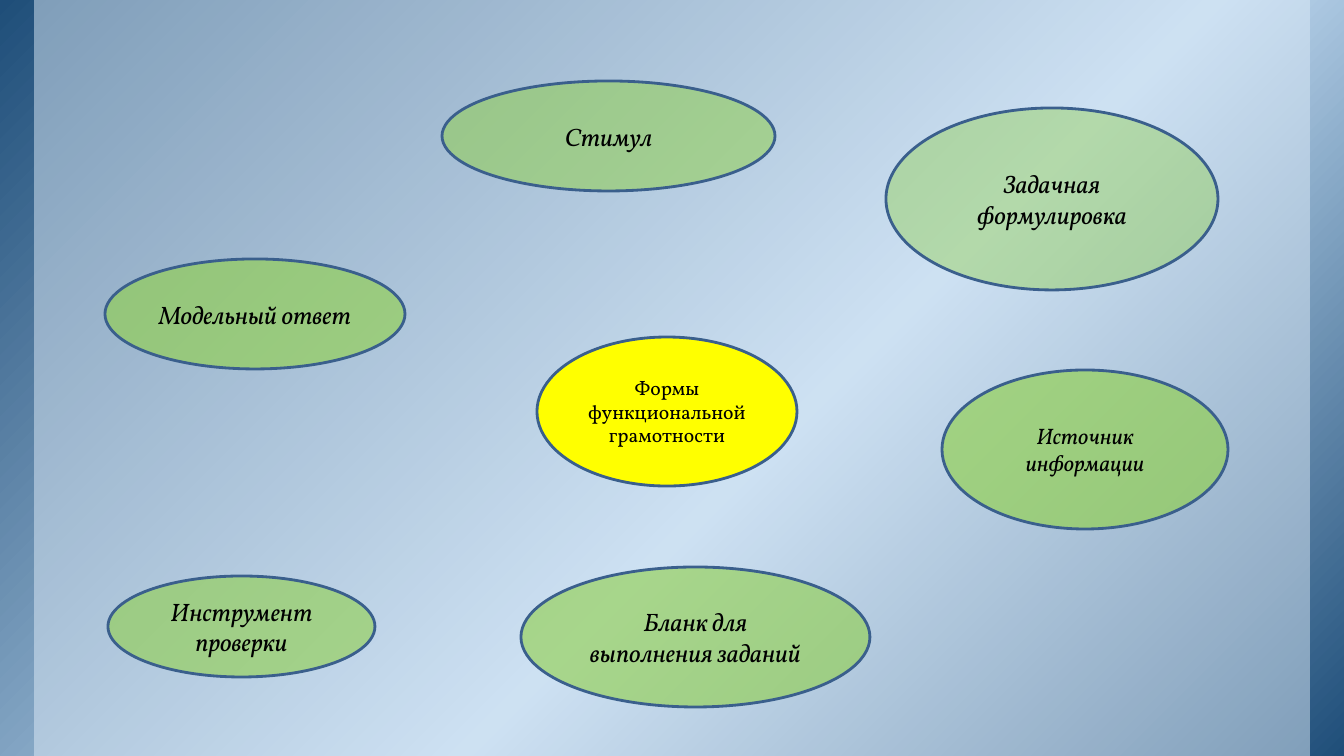
from dataclasses import dataclass

from lxml import etree
from pptx import Presentation
from pptx.dml.color import RGBColor
from pptx.enum.shapes import MSO_SHAPE as SHAPE
from pptx.enum.text import MSO_ANCHOR as ANCHOR, PP_ALIGN as ALIGN
from pptx.oxml.ns import qn
from pptx.util import Emu, Pt

WIDTH, HEIGHT = 1344, 756
SCALE = 914400 / 100.8


@dataclass(frozen=True)
class Theme:
    font: str = "Vollkorn"
    text: str = "000000"
    outline: str = "3A5F8C"
    outline_width: int = 2
    green: str = "92D050"
    yellow: str = "FFFF00"
    veil: str = "DEEBF7"
    veil_alpha: int = 50
    backdrop: tuple = ((0, "1F4E79"), (58, "BDD7EE"), (100, "1F4E79"))
    large: int = 18
    medium: int = 16
    small: int = 14


THEME = Theme()

FORMS = [
    ("Стимул", (442, 81, 333, 110), 55, THEME.large),
    ("Задачная формулировка", (886, 108, 332, 182), 44, THEME.large),
    ("Модельный ответ", (105, 259, 300, 110), 65, THEME.large),
    ("Инструмент проверки", (108, 576, 267, 101), 62, THEME.large),
    ("Источник информации", (942, 370, 286, 159), 67, THEME.medium),
    ("Бланк для выполнения заданий", (521, 567, 349, 140), 63, THEME.large),
]
CENTRE_BOX = (537, 337, 260, 149)


def px(n):
    return Emu(round(n * SCALE))


def add_filled(slide, kind, box, color, alpha=100):
    s = slide.shapes.add_shape(kind, *map(px, box))
    s.shadow.inherit = False
    s.line.fill.background()
    s.fill.solid()
    s.fill.fore_color.rgb = RGBColor.from_string(color)
    if alpha < 100:
        clr = s.fill._xPr.find(qn("a:solidFill"))[0]
        etree.SubElement(clr, qn("a:alpha"), val=str(alpha * 1000))
    return s


def set_gradient(s, stops, angle):
    s.fill.gradient()
    s.fill.gradient_angle = -angle % 360
    stop_list = s.fill._xPr.find(qn("a:gradFill")).find(qn("a:gsLst"))
    for gs in list(stop_list):
        stop_list.remove(gs)
    for pos, color in stops:
        gs = etree.SubElement(stop_list, qn("a:gs"), pos=str(pos * 1000))
        etree.SubElement(gs, qn("a:srgbClr"), val=color)


def add_backdrop(slide, box):
    x, y, w, h = box
    margin = 34
    s = add_filled(slide, SHAPE.RECTANGLE, box, THEME.veil)
    set_gradient(s, THEME.backdrop, 45)
    veil = (x + margin, y, w - 2 * margin, h)
    add_filled(slide, SHAPE.RECTANGLE, veil, THEME.veil, THEME.veil_alpha)


def add_bubble(slide, box, text, size, color, alpha=100, italic=False):
    s = add_filled(slide, SHAPE.OVAL, box, color, alpha)
    s.line.color.rgb = RGBColor.from_string(THEME.outline)
    s.line.width = Pt(THEME.outline_width)
    tf = s.text_frame
    tf.word_wrap = True
    tf.vertical_anchor = ANCHOR.MIDDLE
    p = tf.paragraphs[0]
    p.alignment = ALIGN.CENTER
    r = p.add_run()
    r.text = text
    r.font.name = THEME.font
    r.font.size = Pt(size)
    r.font.italic = italic
    r.font.color.rgb = RGBColor.from_string(THEME.text)


def add_forms_map(slide):
    for text, box, alpha, size in FORMS:
        add_bubble(slide, box, text, size, THEME.green, alpha, italic=True)
    add_bubble(slide, CENTRE_BOX, "Формы функциональной грамотности",
               THEME.small, THEME.yellow)


def main():
    prs = Presentation()
    prs.slide_width, prs.slide_height = px(WIDTH), px(HEIGHT)
    slide = prs.slides.add_slide(prs.slide_layouts[6])
    add_backdrop(slide, (0, 0, WIDTH, HEIGHT))
    add_forms_map(slide)
    prs.save("out.pptx")


if __name__ == "__main__":
    main()
